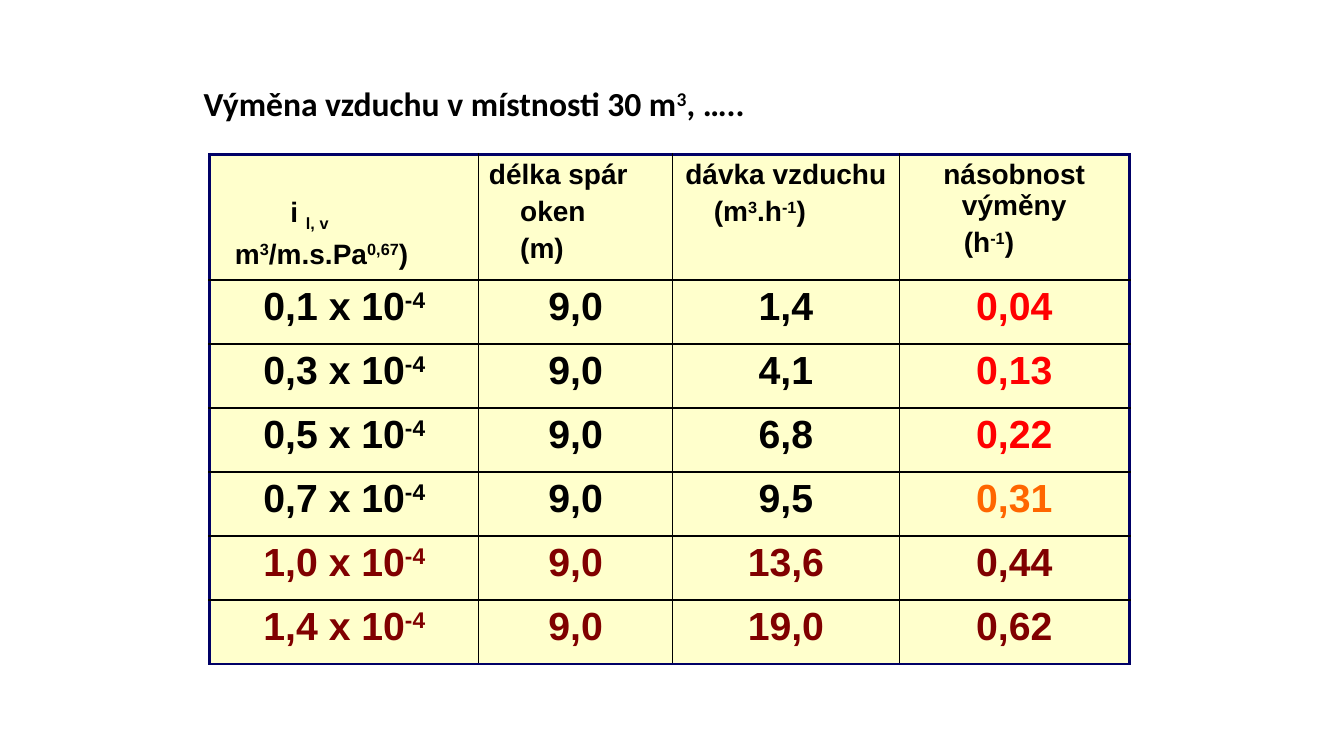
from lxml import etree
from pptx import Presentation
from pptx.dml.color import RGBColor
from pptx.enum.text import MSO_ANCHOR as Anchor, PP_ALIGN as Align
from pptx.oxml.ns import qn
from pptx.util import Inches, Pt

BLACK, NAVY, CREAM = "000000", "000066", "FFFFCC"
RED, ORANGE, MAROON = "FF0000", "FF6600", "800000"
BASELINES = {"^": "30000", "_": "-25000"}

COLUMN_WIDTHS = [2.67, 1.92, 2.25, 2.28]
HEADER_HEIGHT, ROW_HEIGHT = 1.23, 0.635

# Header cells: lines of (text, left indent in inches, or None for centred)
HEADERS = [
    [("i |_l, v", 0.7), ("m|^3|/m.s.Pa|^0,67|)", 0.15)],
    [("délka spár", 0), ("oken", 0.31), ("(m)", 0.31)],
    [("dávka vzduchu", None), ("(m|^3|.h|^-1|)", 0.31)],
    [("násobnost výměny", None), ("(h|^-1|)", 0.54)],
]

# Permeability, air supply, air change rate, colour of the row, colour of the rate
ROWS = [
    ("0,1", "1,4", "0,04", BLACK, RED),
    ("0,3", "4,1", "0,13", BLACK, RED),
    ("0,5", "6,8", "0,22", BLACK, RED),
    ("0,7", "9,5", "0,31", BLACK, ORANGE),
    ("1,0", "13,6", "0,44", MAROON, MAROON),
    ("1,4", "19,0", "0,62", MAROON, MAROON),
]


def rgb(value):
    return RGBColor.from_string(value)


def write(paragraph, text, size=20, font="Arial", color=BLACK, indent=0):
    """Bold text; "|" parts the runs, "^" raises one and "_" lowers one."""
    if indent is None:
        paragraph.alignment = Align.CENTER
    elif indent:
        paragraph._p.get_or_add_pPr().set("marL", str(Inches(indent)))
    for part in text.split("|"):
        run = paragraph.add_run()
        run.text = part.lstrip("^_")
        run.font.size, run.font.name, run.font.bold = Pt(size), font, True
        run.font.color.rgb = rgb(color)
        if part[0] in BASELINES:
            run._r.get_or_add_rPr().set("baseline", BASELINES[part[0]])


def add_title(slide, text):
    box = slide.shapes.add_textbox(Inches(1.92), Inches(0.8), Inches(9.38), Inches(0.5))
    frame = box.text_frame
    frame.word_wrap = True
    frame.vertical_anchor = Anchor.MIDDLE
    frame.paragraphs[0].line_spacing = 0.9
    write(frame.paragraphs[0], text, size=24, font="Calibri")


def set_borders(cell, outer_sides):
    properties = cell._tc.get_or_add_tcPr()
    for position, side in enumerate("LRTB"):
        color, width = (NAVY, 2.25) if side in outer_sides else (BLACK, 1)
        line = etree.Element(qn("a:ln" + side), w=str(Pt(width)))
        fill = etree.SubElement(line, qn("a:solidFill"))
        etree.SubElement(fill, qn("a:srgbClr"), val=color)
        properties.insert(position, line)


def style_cell(table, row, column):
    cell = table.cell(row, column)
    cell.fill.solid()
    cell.fill.fore_color.rgb = rgb(CREAM)
    edges = {"L": column == 0, "R": column == len(COLUMN_WIDTHS) - 1,
             "T": row == 0, "B": row == len(ROWS)}
    set_borders(cell, [side for side, outer in edges.items() if outer])
    return cell


def add_air_table(slide):
    height = HEADER_HEIGHT + ROW_HEIGHT * len(ROWS)
    table = slide.shapes.add_table(
        len(ROWS) + 1, len(COLUMN_WIDTHS), Inches(2.08), Inches(1.53),
        Inches(sum(COLUMN_WIDTHS)), Inches(height)).table
    table.first_row = table.horz_banding = False
    for column, width in zip(table.columns, COLUMN_WIDTHS):
        column.width = Inches(width)
    for index, row in enumerate(table.rows):
        row.height = Inches(ROW_HEIGHT if index else HEADER_HEIGHT)

    # Header row
    for column, lines in enumerate(HEADERS):
        cell = style_cell(table, 0, column)
        for index, (text, indent) in enumerate(lines):
            frame = cell.text_frame
            paragraph = frame.add_paragraph() if index else frame.paragraphs[0]
            if index:
                paragraph.space_before = Pt(4)
            write(paragraph, text, indent=indent)
    table.cell(0, 0).margin_top = Inches(0.43)

    # Value rows
    for row, (factor, supply, rate, color, rate_color) in enumerate(ROWS, 1):
        values = [f"{factor} x 10|^-4", "9,0", supply, rate]
        for column, text in enumerate(values):
            cell = style_cell(table, row, column)
            write(cell.text_frame.paragraphs[0], text, size=28, indent=None,
                  color=rate_color if column == 3 else color)


def main():
    presentation = Presentation()
    presentation.slide_width, presentation.slide_height = Inches(13.33), Inches(7.5)
    slide = presentation.slides.add_slide(presentation.slide_layouts[6])
    add_title(slide, "Výměna vzduchu v místnosti 30 m|^3|, …..")
    add_air_table(slide)
    presentation.save("out.pptx")


if __name__ == "__main__":
    main()
